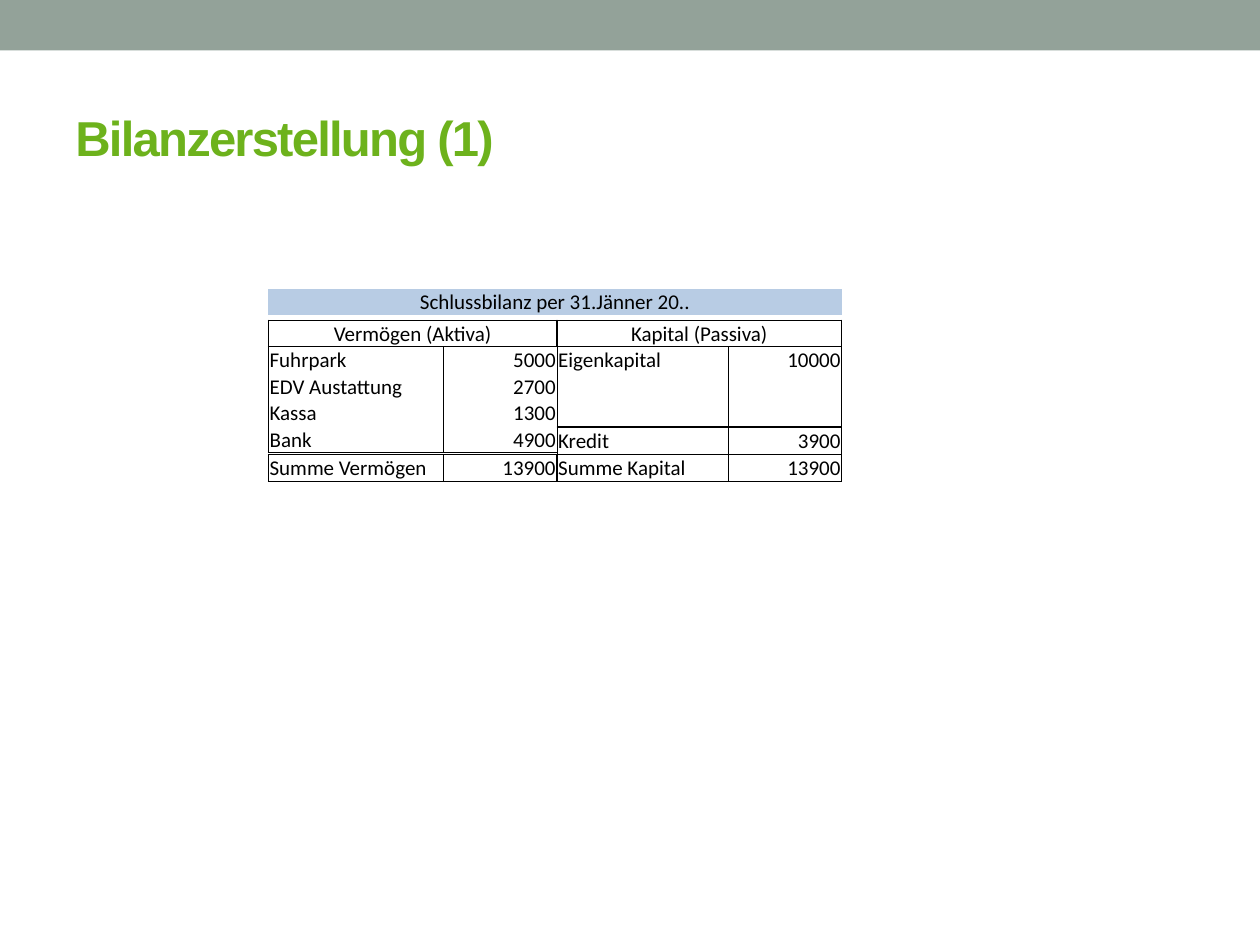
from lxml import etree
from pptx import Presentation
from pptx.dml.color import RGBColor
from pptx.enum.shapes import MSO_SHAPE
from pptx.enum.text import MSO_ANCHOR, PP_ALIGN
from pptx.oxml.ns import qn
from pptx.util import Inches, Pt

RECT = MSO_SHAPE.RECTANGLE
LEFT, CENTER, RIGHT = PP_ALIGN.LEFT, PP_ALIGN.CENTER, PP_ALIGN.RIGHT
MIDDLE, BOTTOM = MSO_ANCHOR.MIDDLE, MSO_ANCHOR.BOTTOM
PLAIN_STYLE = "{2D5ABB26-0587-4C30-8999-92F81FD0307C}"

BLACK, GREEN, GREY, BLUE = "000000", "6DB21C", "93A299", "B8CCE4"
ROW_H, INSET, BORDER = 0.21, 0.01, 0.5
ASSET_W, CAPITAL_W, AMOUNT_W = 1.39, 1.36, 0.9
ASSET_X = 2.13
ASSET_AMOUNT_X = ASSET_X + ASSET_W
CAPITAL_X = ASSET_AMOUNT_X + AMOUNT_W
ASSETS_W, LIABILITIES_W = ASSET_W + AMOUNT_W, CAPITAL_W + AMOUNT_W
HEADING_Y, SIDES_Y, ITEMS_Y, LOAN_Y, TOTAL_Y = 2.29, 2.54, 2.75, 3.39, 3.61

TITLE = "Bilanzerstellung (1)"
ASSETS = [("Fuhrpark", "5000"), ("EDV Austattung", "2700"),
          ("Kassa", "1300"), ("Bank", "4900")]
EQUITY = [("Eigenkapital", "10000"), ("", ""), ("", "")]

# left, top, column widths, alignments, edges, fill, rows
TABLES = [
    (ASSET_X, HEADING_Y, [ASSETS_W + LIABILITIES_W], [CENTER], "", BLUE,
     [("Schlussbilanz per 31.Jänner 20..",)]),
    (ASSET_X, SIDES_Y, [ASSETS_W], [CENTER], "LRTB", None, [("Vermögen (Aktiva)",)]),
    (ASSET_X, ITEMS_Y, [ASSET_W], [LEFT], "LRTB", None, [(name,) for name, _ in ASSETS]),
    (ASSET_AMOUNT_X, ITEMS_Y, [AMOUNT_W], [RIGHT], "LRTB", None,
     [(amount,) for _, amount in ASSETS]),
    (ASSET_X, TOTAL_Y, [ASSET_W, AMOUNT_W], [LEFT, RIGHT], "LRTB", None,
     [("Summe Vermögen", "13900")]),
    (CAPITAL_X, TOTAL_Y, [CAPITAL_W, AMOUNT_W], [LEFT, RIGHT], "LRTB", None,
     [("Summe Kapital", "13900")]),
    (CAPITAL_X, LOAN_Y, [CAPITAL_W, AMOUNT_W], [LEFT, RIGHT], "LRT", None,
     [("Kredit", "3900")]),
    (CAPITAL_X, ITEMS_Y, [CAPITAL_W, AMOUNT_W], [LEFT, RIGHT], "LRB", None, EQUITY),
    (CAPITAL_X, SIDES_Y, [LIABILITIES_W], [CENTER], "LRTB", None, [("Kapital (Passiva)",)]),
]


def rgb(color):
    return RGBColor.from_string(color)


def style_run(r, font, size, color):
    r.font.name, r.font.size = font, Pt(size)
    r.font.color.rgb = rgb(color)


def add_border(cell, side):
    ln = etree.SubElement(cell._tc.get_or_add_tcPr(), qn(f"a:ln{side}"), w=str(Pt(BORDER)))
    fill = etree.SubElement(ln, qn("a:solidFill"))
    etree.SubElement(fill, qn("a:srgbClr"), val=BLACK)


def fill_cell(cell, text, align, sides, fill):
    cell.margin_left = cell.margin_right = cell.margin_top = Inches(INSET)
    cell.margin_bottom = 0
    cell.vertical_anchor = BOTTOM
    p = cell.text_frame.paragraphs[0]
    p.alignment = align
    if text:
        p.text = text
        style_run(p.runs[0], "Calibri", 12, BLACK)
    else:
        etree.SubElement(p._p, qn("a:endParaRPr"), sz="1200")
    for side in sides:
        add_border(cell, side)
    if fill:
        cell.fill.solid()
        cell.fill.fore_color.rgb = rgb(fill)
    else:
        cell.fill.background()


def add_ledger(s, left, top, widths, aligns, edges, fill, rows):
    frame = s.shapes.add_table(len(rows), len(widths), Inches(left), Inches(top),
                               Inches(sum(widths)), Inches(ROW_H * len(rows)))
    table = frame.table
    table._tbl.tblPr.find(qn("a:tableStyleId")).text = PLAIN_STYLE
    table.first_row = table.horz_banding = False
    for column, width in zip(table.columns, widths):
        column.width = Inches(width)
    for i, row in enumerate(rows):
        inner = ("T" if i > 0 else "") + ("B" if i < len(rows) - 1 else "")
        sides = [side for side in edges if side not in inner]
        for j, text in enumerate(row):
            fill_cell(table.cell(i, j), text, aligns[j], sides, fill)


prs = Presentation()
prs.slide_width, prs.slide_height = Inches(10), Inches(7.5)
s = prs.slides.add_slide(prs.slide_layouts[6])

band = s.shapes.add_shape(RECT, 0, 0, prs.slide_width, Inches(0.4))
band.shadow.inherit = False
band.fill.solid()
band.fill.fore_color.rgb = rgb(GREY)
band.line.fill.background()

title = s.shapes.add_textbox(Inches(0.5), Inches(0.55), Inches(9), Inches(1.08))
tf = title.text_frame
tf.word_wrap = True
tf.vertical_anchor = MIDDLE
tf.text = TITLE
r = tf.paragraphs[0].runs[0]
style_run(r, "Arial", 28, GREEN)
r.font.bold = True
r._r.get_or_add_rPr().set("spc", "-100")

for ledger in TABLES:
    add_ledger(s, *ledger)

prs.save("out.pptx")
